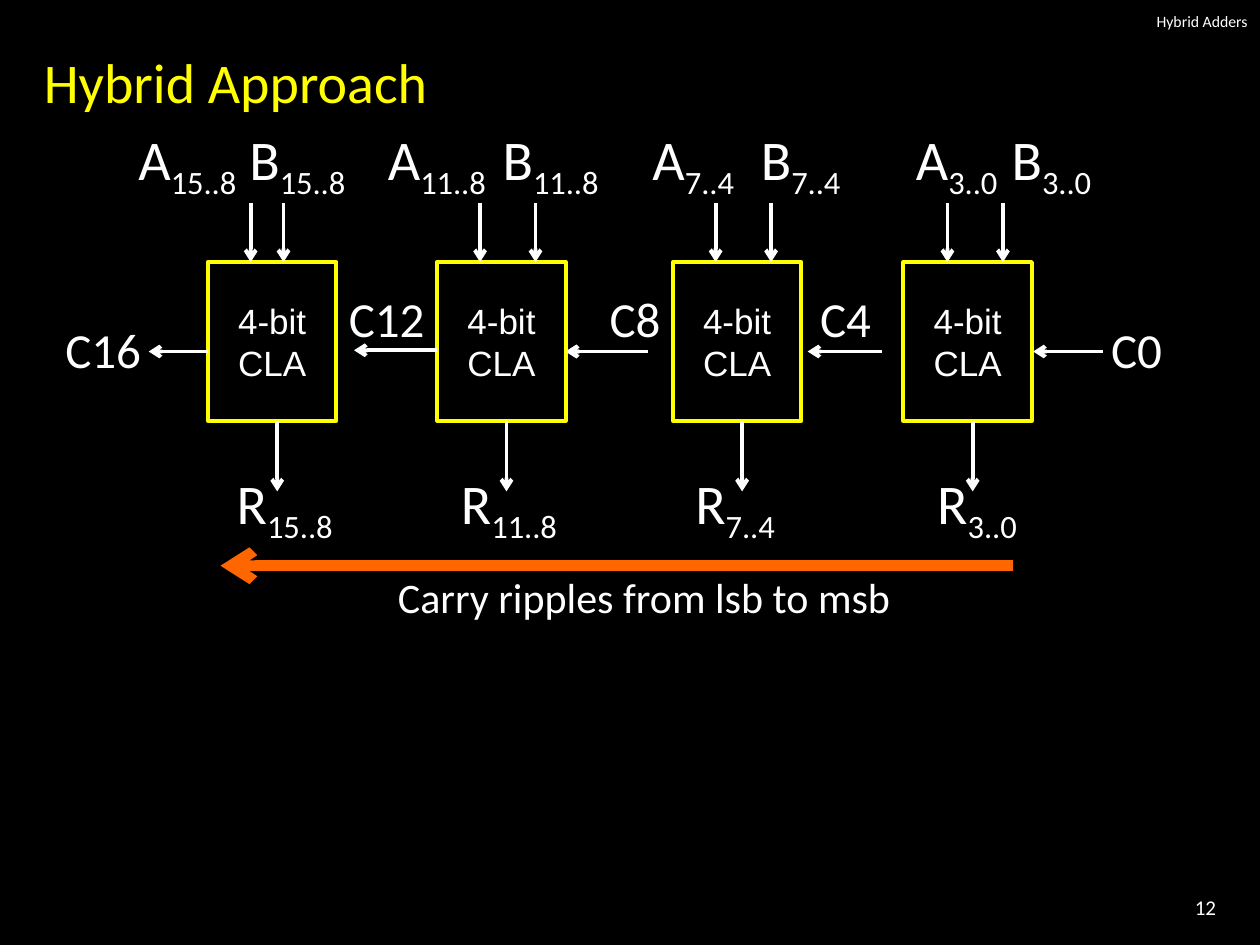
from pptx import Presentation
from pptx.dml.color import RGBColor
from pptx.enum.shapes import MSO_CONNECTOR, MSO_SHAPE
from pptx.enum.text import MSO_ANCHOR, PP_ALIGN
from pptx.oxml.ns import qn
from pptx.util import Inches, Pt
from lxml.etree import SubElement

WHITE, YELLOW, ORANGE, BLACK = "FFFFFF", "FFFF00", "FF6600", "000000"

# bits, box left, input arrow x pair, A left, B left, R left
ADDERS = [
    ("15..8", 1.65, (1.99, 2.25), 1, 1.88, 1.78),
    ("11..8", 3.47, (3.81, 4.25), 2.98, 3.89, 3.56),
    ("7..4", 5.34, (5.68, 6.12), 5.08, 5.94, 5.42),
    ("3..0", 7.17, (7.52, 7.96), 7.17, 7.93, 7.34),
]
CARRIES = [
    ("C16", 0.42, 2.49, 0.81),
    ("C12", 2.67, 2.24, 0.81),
    ("C8", 4.74, 2.24, 0.61),
    ("C4", 6.41, 2.24, 0.61),
    ("C0", 8.72, 2.49, 0.61),
]
FLOWS = [(1.65, 1.18, 2.79), (3.47, 2.81, 2.78), (4.96, 4.49, 2.79),
         (5.14, 4.49, 2.79), (7, 6.41, 2.79), (8.75, 8.2, 2.79)]
WIDE, TALL, TOP = 1.02, 1.26, 2.08
BASE = TOP + TALL


def color(code):
    return RGBColor.from_string(code)


def style(para, size, face="Calibri", code=WHITE):
    para.font.size = Pt(size)
    para.font.name = face
    para.font.color.rgb = color(code)


def label(text, left, top, wide, high, size, sub="", code=WHITE,
          align=PP_ALIGN.LEFT, anchor=MSO_ANCHOR.TOP, wrap=False):
    box = slide.shapes.add_textbox(*map(Inches, (left, top, wide, high)))
    frame = box.text_frame
    frame.word_wrap = wrap
    frame.vertical_anchor = anchor
    para = frame.paragraphs[0]
    para.alignment = align
    style(para, size, code=code)
    para.add_run().text = text
    if sub:
        run = para.add_run()
        run.text = sub
        run._r.get_or_add_rPr().set("baseline", "-25000")


def arrow(x1, y1, x2, y2, code=WHITE, width=2.25):
    line = slide.shapes.add_connector(
        MSO_CONNECTOR.STRAIGHT, *map(Inches, (x1, y1, x2, y2)))
    line.line.color.rgb = color(code)
    line.line.width = Pt(width)
    SubElement(line.line._get_or_add_ln(), qn("a:tailEnd"), type="arrow")
    SubElement(line._element.spPr, qn("a:effectLst"))


def block(left):
    box = slide.shapes.add_shape(
        MSO_SHAPE.RECTANGLE, *map(Inches, (left, TOP, WIDE, TALL)))
    box.shadow.inherit = False
    box.fill.background()
    box.line.color.rgb = color(YELLOW)
    box.line.width = Pt(2.25)
    frame = box.text_frame
    frame.word_wrap = False
    frame.vertical_anchor = MSO_ANCHOR.MIDDLE
    frame.text = "4-bit\nCLA"
    for para in frame.paragraphs:
        para.alignment = PP_ALIGN.CENTER
        style(para, 20, "Arial")


deck = Presentation()
deck.slide_width, deck.slide_height = Inches(10), Inches(7.5)
slide = deck.slides.add_slide(deck.slide_layouts[6])
slide.background.fill.solid()
slide.background.fill.fore_color.rgb = color(BLACK)

corner = dict(align=PP_ALIGN.RIGHT, anchor=MSO_ANCHOR.MIDDLE, wrap=True)
label("12", 8.92, 7, 0.83, 0.4, 12, **corner)
label("Hybrid Adders", 6.17, 0, 3.83, 0.33, 9, **corner)
label("Hybrid Approach", 0.25, 0.33, 9.5, 0.92, 32, code=YELLOW, wrap=True)

for bits, left, pair, a_left, b_left, r_left in ADDERS:
    block(left)
    for x in pair:
        arrow(x, 1.61, x, TOP)
    out = left + 0.55
    arrow(out, BASE, out, 3.9)
    wide = 1.05 if len(bits) > 4 else 0.9
    label("A", a_left, 0.94, wide + 0.02, 0.64, 32, bits)
    label("B", b_left, 0.94, wide, 0.64, 32, bits)
    label("R", r_left, 3.67, wide, 0.64, 32, bits)

for start, end, y in FLOWS:
    arrow(start, y, end, y)
for name, left, top, wide in CARRIES:
    label(name, left, top, wide, 0.57, 28)

arrow(8.04, 4.49, 1.75, 4.49, ORANGE, 6)
label("Carry ripples from lsb to msb", 3.06, 4.49, 4.14, 0.5, 24)

deck.save("out.pptx")
